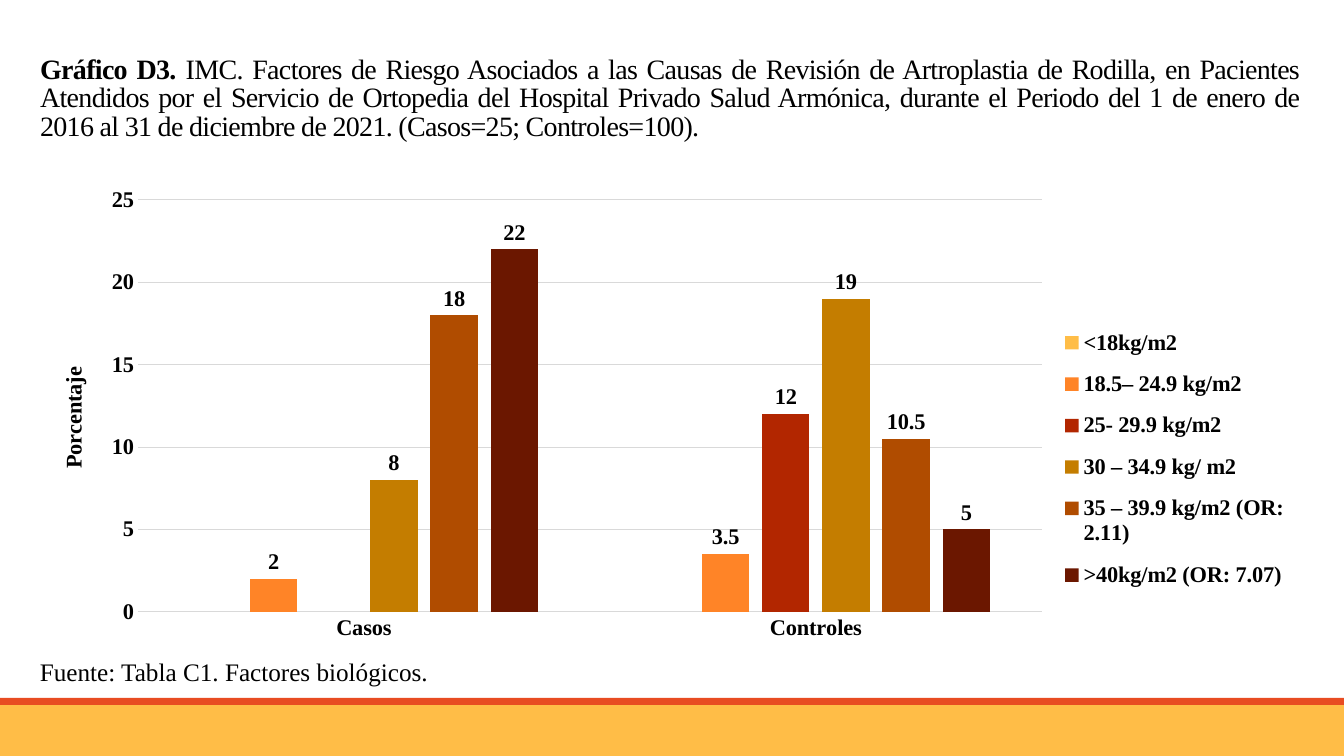
from lxml import etree
from pptx import Presentation
from pptx.chart.data import CategoryChartData
from pptx.dml.color import RGBColor
from pptx.enum.chart import XL_CHART_TYPE, XL_LABEL_POSITION, XL_LEGEND_POSITION, XL_TICK_MARK
from pptx.enum.shapes import MSO_SHAPE
from pptx.enum.text import MSO_ANCHOR, PP_ALIGN
from pptx.oxml.ns import qn
from pptx.util import Pt

COLUMNS = XL_CHART_TYPE.COLUMN_CLUSTERED
OUTSIDE = XL_LABEL_POSITION.OUTSIDE_END
RIGHT = XL_LEGEND_POSITION.RIGHT
NO_TICK = XL_TICK_MARK.NONE
RECT = MSO_SHAPE.RECTANGLE
MIDDLE = MSO_ANCHOR.MIDDLE
JUSTIFY = PP_ALIGN.JUSTIFY

PX = 914400 / 100.8
WIDTH, HEIGHT = 1344, 756
FONT = "Times New Roman"
COLORS = {"text": "000000", "grid": "D9D9D9", "band": "FFBD47", "strip": "E84C22"}
CATEGORIES = ["Casos", "Controles"]
SERIES = [
    ("<18kg/m2", (None, None), "FFBD47"),
    ("18.5– 24.9 kg/m2", (2, 3.5), "FF8427"),
    ("25- 29.9 kg/m2", (None, 12), "B22600"),
    ("30 – 34.9 kg/ m2", (8, 19), "C47D00"),
    ("35 – 39.9 kg/m2 (OR: 2.11)", (18, 10.5), "B04C00"),
    (">40kg/m2 (OR: 7.07)", (22, 5), "6B1700"),
]
TITLE_RUNS = [
    ("Gráfico D3.", True),
    (" IMC. Factores de Riesgo Asociados a las Causas de Revisión de Artroplastia "
     "de Rodilla, en Pacientes Atendidos por el Servicio de Ortopedia del Hospital "
     "Privado Salud Armónica, durante el Periodo del 1 de enero de 2016 al 31 de "
     "diciembre de 2021. (Casos=25; Controles=100).", False),
]


def emu(*lengths):
    return [round(n * PX) for n in lengths]


def rgb(hex_color):
    return RGBColor.from_string(hex_color)


def set_font(font, size, bold=False):
    for name, value in {"name": FONT, "size": Pt(size), "bold": bold}.items():
        setattr(font, name, value)
    font.color.rgb = rgb(COLORS["text"])


def set_line(line, color):
    line.color.rgb = rgb(color)
    line.width = Pt(0.75)


def place_in_chart(element, chart_box, box, inner=False):
    """Fix a chart part at a slide box; a box of two numbers sets the position only."""
    for old in element.findall(qn("c:layout")):
        element.remove(old)
    layout = etree.Element(qn("c:layout"))
    manual = etree.SubElement(layout, qn("c:manualLayout"))
    left, top, width, height = chart_box
    settings = [("layoutTarget", "inner")] if inner else []
    settings += [("xMode", "edge"), ("yMode", "edge")]
    fractions = [(box[0] - left) / width, (box[1] - top) / height]
    if len(box) == 4:
        fractions += [box[2] / width, box[3] / height]
    settings += [(tag, f"{value:.4f}") for tag, value in zip("xywh", fractions)]
    for tag, value in settings:
        etree.SubElement(manual, qn("c:" + tag)).set("val", value)
    before = [child for child in element if child.tag in (qn("c:tx"), qn("c:legendPos"))]
    element.insert(element.index(before[0]) + 1 if before else 0, layout)


def add_footer_bands(slide, left, top, width, height):
    strip = 7
    bands = [(top + strip, height - strip, "band"), (top, strip, "strip")]
    for y, h, name in bands:
        s = slide.shapes.add_shape(RECT, *emu(left, y, width, h))
        s.shadow.inherit = False
        s.fill.solid()
        s.fill.fore_color.rgb = rgb(COLORS[name])
        s.line.fill.background()


def add_title(slide, *box):
    title = slide.shapes.title
    title.left, title.top, title.width, title.height = emu(*box)
    tf = title.text_frame
    tf.word_wrap = True
    tf.vertical_anchor = MIDDLE
    p = tf.paragraphs[0]
    p.alignment = JUSTIFY
    p.line_spacing = 0.85
    for text, bold in TITLE_RUNS:
        r = p.add_run()
        r.text = text
        set_font(r.font, 20, bold)
        r.font._element.set("spc", "-50")


def add_bmi_chart(slide, left, top, width, height):
    box = left, top, width, height
    data = CategoryChartData()
    data.categories = CATEGORIES
    for name, values, _ in SERIES:
        data.add_series(name, values)
    chart = slide.shapes.add_chart(COLUMNS, *emu(*box), data).chart
    chart.has_title = False
    set_font(chart.font, 16, True)

    plot = chart.plots[0]
    plot.gap_width, plot.overlap = 219, -27
    plot.vary_by_categories = False
    for series, (_, _, color) in zip(plot.series, SERIES):
        series.format.fill.solid()
        series.format.fill.fore_color.rgb = rgb(color)
        series.invert_if_negative = False
        labels = series.data_labels
        labels.show_value = True
        labels.position = OUTSIDE
        set_font(labels.font, 16, True)

    for axis in (chart.category_axis, chart.value_axis):
        axis.major_tick_mark = axis.minor_tick_mark = NO_TICK
        set_font(axis.tick_labels.font, 16, True)
    set_line(chart.category_axis.format.line, COLORS["grid"])
    axis = chart.value_axis
    axis.minimum_scale, axis.maximum_scale, axis.major_unit = 0, 25, 5
    axis.format.line.fill.background()
    set_line(axis.major_gridlines.format.line, COLORS["grid"])
    p = axis.axis_title.text_frame.paragraphs[0]
    r = p.add_run()
    r.text = "Porcentaje"
    set_font(r.font, 16, True)

    chart.has_legend = True
    legend = chart.legend
    legend.position = RIGHT
    legend.include_in_layout = False
    set_font(legend.font, 16, True)

    plot_area = chart._chartSpace.chart.plotArea
    place_in_chart(plot_area, box, (left + 108, top + 22, 904, 412), inner=True)
    place_in_chart(axis.axis_title._element, box, (left + 25, top + 185))
    place_in_chart(legend._element, box, (left + 1022, top + 136, 245, 290))


def add_source_note(slide, *box):
    tf = slide.shapes.add_textbox(*emu(*box)).text_frame
    tf.word_wrap = True
    r = tf.paragraphs[0].add_run()
    r.text = "Fuente: Tabla C1. Factores biológicos."
    set_font(r.font, 18)


def main():
    prs = Presentation()
    prs.slide_width, prs.slide_height = emu(WIDTH, HEIGHT)
    slide = prs.slides.add_slide(prs.slide_layouts[5])
    margin, content = 30, 1279
    add_footer_bands(slide, 0, 698, WIDTH, HEIGHT - 698)
    add_title(slide, margin, 19, content, 160)
    add_bmi_chart(slide, margin, 178, content, 473)
    add_source_note(slide, margin, 651, 467, 40)
    prs.save("out.pptx")


if __name__ == "__main__":
    main()
